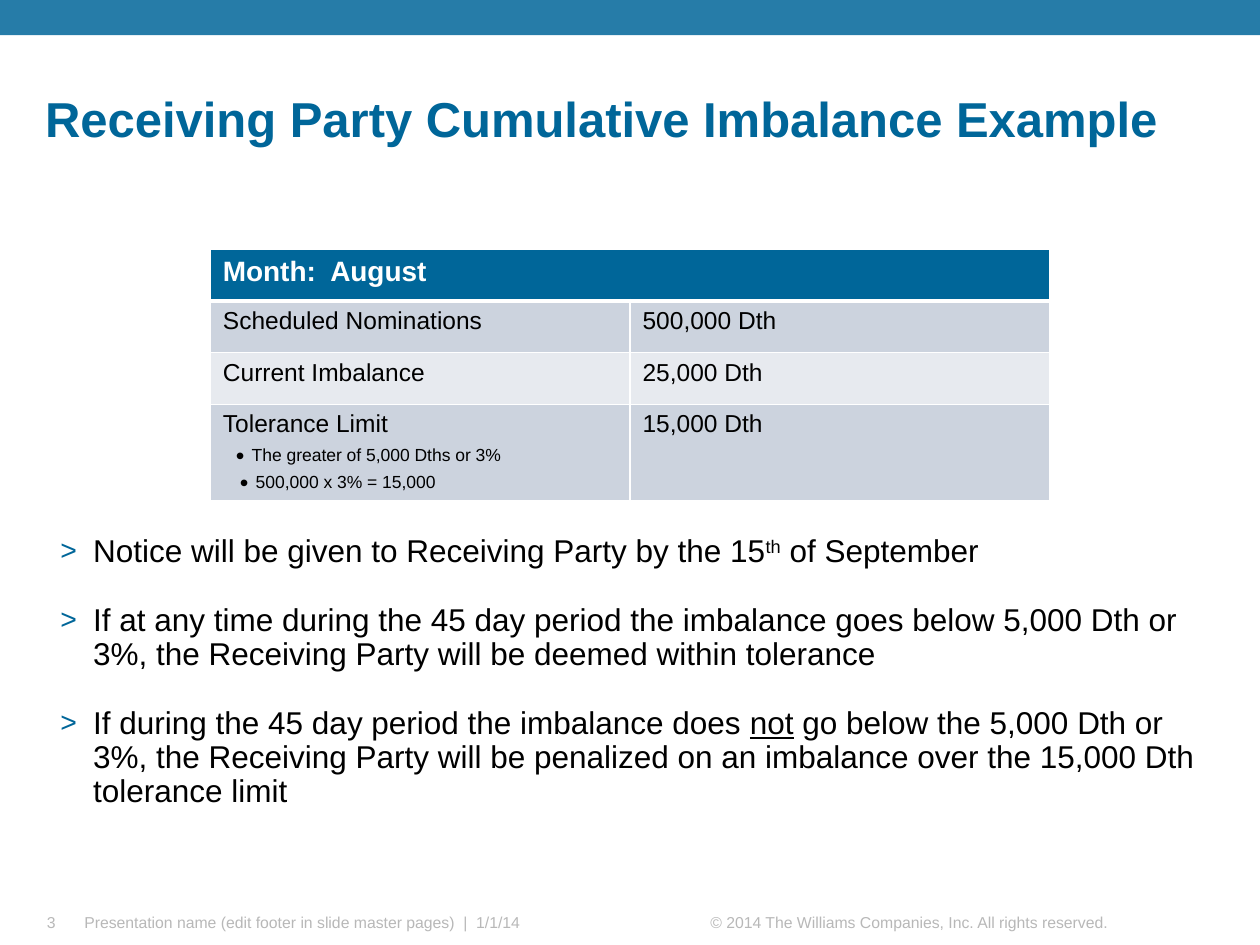
"""Build the slide on the receiving party's cumulative imbalance."""
from lxml.etree import SubElement
from pptx import Presentation
from pptx.dml.color import RGBColor
from pptx.enum.shapes import MSO_SHAPE
from pptx.enum.text import MSO_ANCHOR, PP_ALIGN
from pptx.oxml import parse_xml
from pptx.oxml.ns import nsdecls, qn
from pptx.util import Cm, Pt

BLUE = RGBColor(0x00, 0x66, 0x99)
GRAY = RGBColor(0xB8, 0xB8, 0xB8)
BLACK = RGBColor(0x00, 0x00, 0x00)
WHITE = RGBColor(0xFF, 0xFF, 0xFF)
BAND_DARK = RGBColor(0xCC, 0xD3, 0xDE)
BAND_LIGHT = RGBColor(0xE7, 0xEA, 0xEF)


def add_run(paragraph, text, size, color, bold=False):
    run = paragraph.add_run()
    run.text = text
    run.font.name = "Arial"
    run.font.size = Pt(size)
    run.font.color.rgb = color
    run.font.bold = bold
    return run


def add_bullet(paragraph, character, color, percent, left, hanging):
    properties = paragraph._p.get_or_add_pPr()
    properties.set("marL", str(Cm(left)))
    properties.set("indent", str(-Cm(hanging)))
    bullet_color = SubElement(properties, qn("a:buClr"))
    SubElement(bullet_color, qn("a:srgbClr"), val=str(color))
    SubElement(properties, qn("a:buSzPct"), val=str(percent * 1000))
    SubElement(properties, qn("a:buFont"), typeface="Arial")
    SubElement(properties, qn("a:buChar"), char=character)


presentation = Presentation()
presentation.slide_width = Cm(25.4)
presentation.slide_height = Cm(19.05)
slide = presentation.slides.add_slide(presentation.slide_layouts[6])

bar = slide.shapes.add_shape(MSO_SHAPE.RECTANGLE, Cm(0), Cm(-0.05), Cm(25.4), Cm(0.76))
bar.shadow.inherit = False
bar.fill.solid()
bar.fill.fore_color.rgb = BLUE
bar.line.fill.background()
bar_color = bar._element.spPr.find(qn("a:solidFill")).find(qn("a:srgbClr"))
SubElement(bar_color, qn("a:alpha"), val="85000")

single_lines = [
    ("3", 0.2, 18.39, 0.92, 0.4, 0, PP_ALIGN.RIGHT, MSO_ANCHOR.BOTTOM, 9, GRAY, False),
    ("© 2014 The Williams Companies, Inc. All rights reserved.",
     10.52, 18.31, 12.06, 0.61, 0.25, PP_ALIGN.RIGHT, MSO_ANCHOR.BOTTOM, 9, GRAY, False),
    ("Presentation name (edit footer in slide master pages)  |  1/1/14",
     1.45, 18.31, 12.34, 0.61, 0.25, PP_ALIGN.LEFT, MSO_ANCHOR.MIDDLE, 9, GRAY, False),
    ("Receiving Party Cumulative Imbalance Example",
     0.66, 0.81, 24.08, 2.31, 0.25, PP_ALIGN.LEFT, MSO_ANCHOR.BOTTOM, 28, BLUE, True),
]
for text, left, top, width, height, inset, align, anchor, size, color, bold in single_lines:
    box = slide.shapes.add_textbox(Cm(left), Cm(top), Cm(width), Cm(height))
    frame = box.text_frame
    frame.word_wrap = True
    frame.vertical_anchor = anchor
    frame.margin_left = frame.margin_right = Cm(inset)
    frame.margin_top = frame.margin_bottom = Cm(inset / 2)
    paragraph = frame.paragraphs[0]
    paragraph.alignment = align
    paragraph.line_spacing = 0.9
    add_run(paragraph, text, size, color, bold)

notes = [
    ["Notice will be given to Receiving Party by the 15", "th", " of September"],
    ["If at any time during the 45 day period the imbalance goes below 5,000 Dth or 3%, "
     "the Receiving Party will be deemed within tolerance"],
    ["If during the 45 day period the imbalance does ", "not",
     " go below the 5,000 Dth or 3%, the Receiving Party will be penalized on an imbalance "
     "over the 15,000 Dth tolerance limit"],
]
body = slide.shapes.add_textbox(Cm(0.97), Cm(10.67), Cm(23.5), Cm(4.52))
frame = body.text_frame
frame.word_wrap = True
for index, pieces in enumerate(notes):
    paragraph = frame.add_paragraph() if index else frame.paragraphs[0]
    add_bullet(paragraph, ">", BLUE, 90, 0.66, 0.66)
    paragraph.line_spacing = 0.9
    paragraph.space_before = Pt(20 if index else 0)
    for piece in pieces:
        run = add_run(paragraph, piece, 18, BLACK)
        if piece == "th":
            run.font._element.set("baseline", "30000")
        elif piece == "not":
            run.font.underline = True

rows = [
    ("Month:  August", "", BLUE),
    ("Scheduled Nominations", "500,000 Dth", BAND_DARK),
    ("Current Imbalance", "25,000 Dth", BAND_LIGHT),
    ("Tolerance Limit", "15,000 Dth", BAND_DARK),
]
table = slide.shapes.add_table(4, 2, Cm(4.24), Cm(5.03), Cm(16.93), Cm(5)).table
for column in table.columns:
    column.width = Cm(8.46)
for row, height in zip(table.rows, (1.04, 1.04, 1.04, 1.88)):
    row.height = Cm(height)
table.cell(0, 0).merge(table.cell(0, 1))

for row_index, (label, value, fill_color) in enumerate(rows):
    header = row_index == 0
    for column_index, text in enumerate((label, value)):
        cell = table.cell(row_index, column_index)
        properties = cell._tc.get_or_add_tcPr()
        for side in "LRTB":
            thick = (header and side == "B") or (row_index == 1 and side == "T")
            properties.append(parse_xml(
                f'<a:ln{side} {nsdecls("a")} w="{Pt(3 if thick else 1)}"><a:solidFill>'
                f'<a:srgbClr val="{WHITE}"/></a:solidFill></a:ln{side}>'))
        cell.fill.solid()
        cell.fill.fore_color.rgb = fill_color
        if text:
            add_run(cell.text_frame.paragraphs[0], text, 16 if header else 14,
                    WHITE if header else BLACK, header)

limit_frame = table.cell(3, 0).text_frame
for text, left in (("The greater of 5,000 Dths or 3%", 0.58), ("500,000 x 3% = 15,000", 0.66)):
    paragraph = limit_frame.add_paragraph()
    add_bullet(paragraph, "•", BLACK, 140, left, 0.32)
    paragraph.line_spacing = Pt(15.5)
    add_run(paragraph, text, 10, BLACK)

presentation.save("out.pptx")
